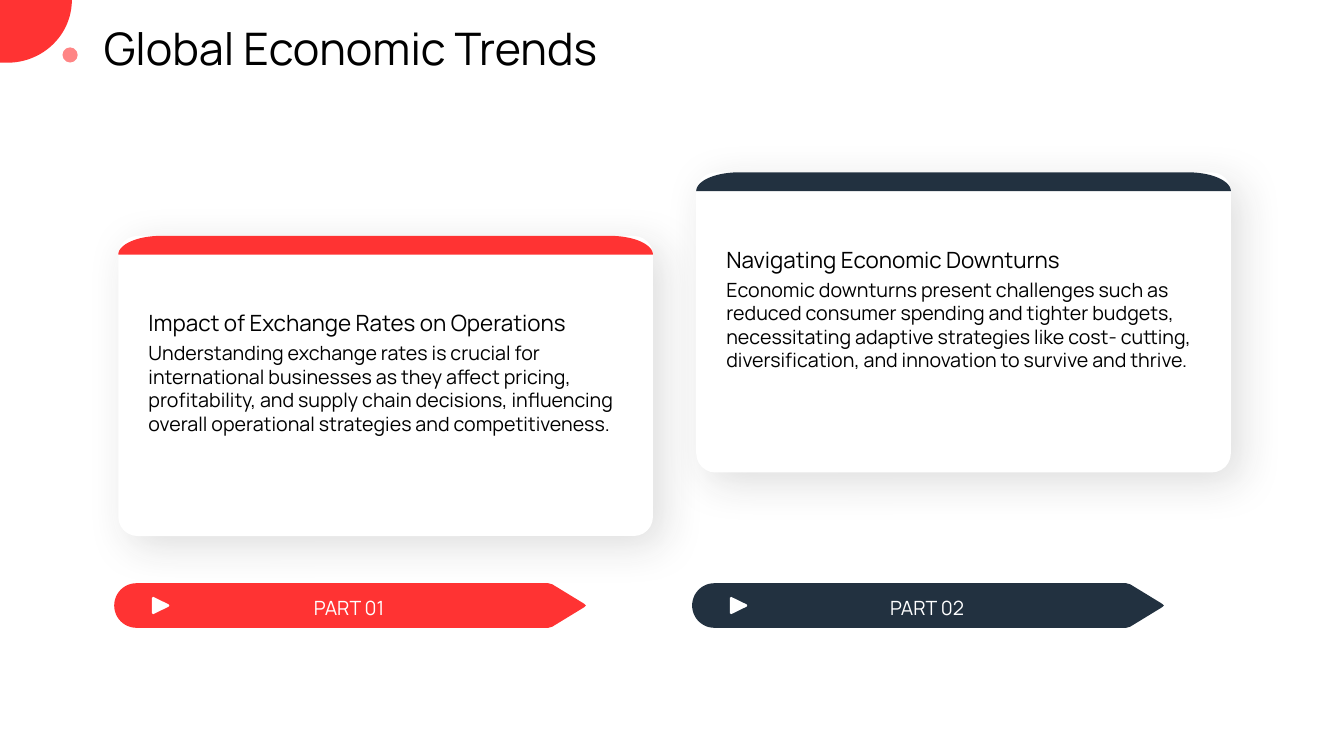
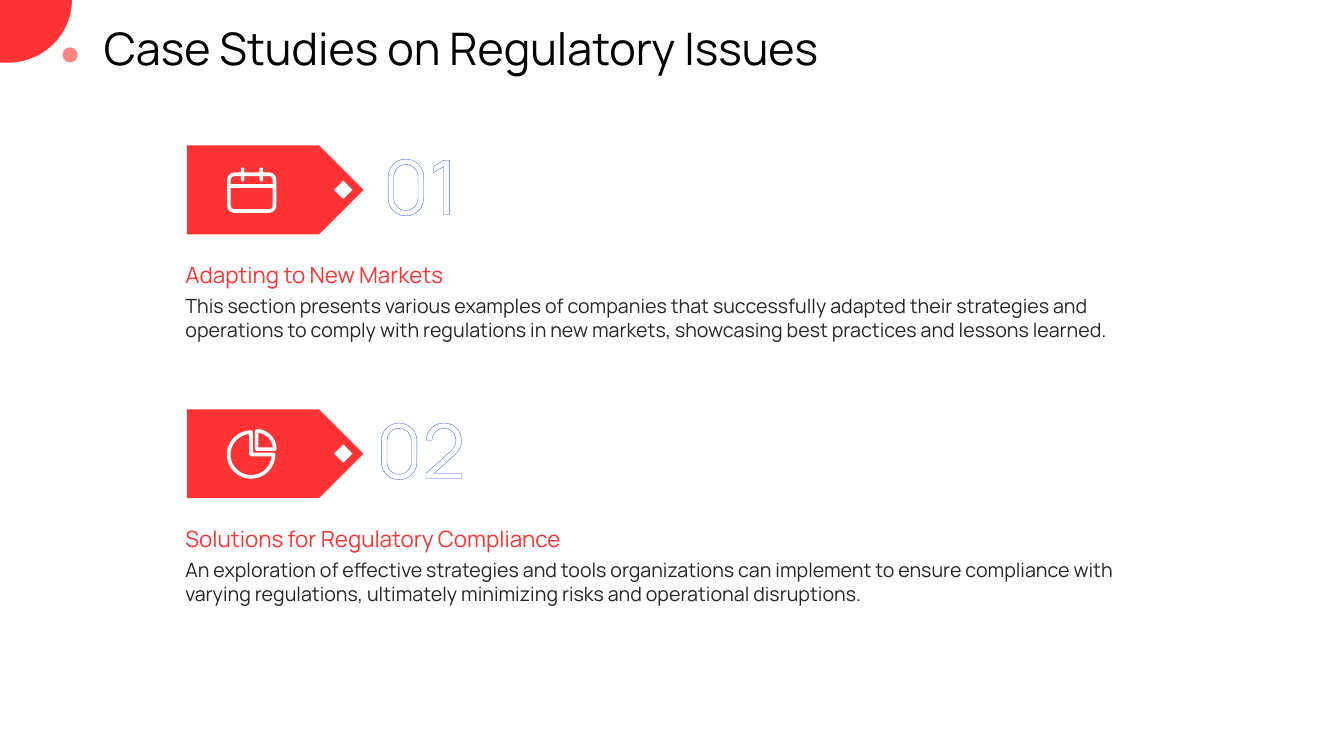
from math import cos, radians, sin

from lxml import etree
from pptx import Presentation
from pptx.dml.color import RGBColor
from pptx.enum.shapes import MSO_CONNECTOR, MSO_SHAPE
from pptx.enum.text import MSO_ANCHOR, MSO_AUTO_SIZE, PP_ALIGN
from pptx.oxml.ns import qn
from pptx.util import Inches, Pt

# Enum members
RECTANGLE, ELLIPSE = MSO_SHAPE.RECTANGLE, MSO_SHAPE.OVAL
ROUNDED, TAG = MSO_SHAPE.ROUNDED_RECTANGLE, MSO_SHAPE.PENTAGON
STRAIGHT = MSO_CONNECTOR.STRAIGHT
TOP, MIDDLE, BOTTOM = MSO_ANCHOR.TOP, MSO_ANCHOR.MIDDLE, MSO_ANCHOR.BOTTOM
LEFT, CENTER = PP_ALIGN.LEFT, PP_ALIGN.CENTER
GROW = MSO_AUTO_SIZE.SHAPE_TO_FIT_TEXT

# Shared look
WIDTH, HEIGHT = Inches(13.33), Inches(7.5)
FONT = "Manrope"
RED, PINK, NAVY, BLUE = "FF3333", "FF8585", "223140", "3860F4"
WHITE, BLACK, GREY = "FFFFFF", "000000", "262626"
ICON_LINE = 2.6

# Pitches, in percent of the slide
CARD_PITCH = 43
CASE_PITCH = 34.9

CARDS = [
    (31.2, RED, "PART 01", "Impact of Exchange Rates on Operations",
     "Understanding exchange rates is crucial for international businesses as "
     "they affect pricing, profitability, and supply chain decisions, "
     "influencing overall operational strategies and competitiveness."),
    (22.8, NAVY, "PART 02", "Navigating Economic Downturns",
     "Economic downturns present challenges such as reduced consumer spending "
     "and tighter budgets, necessitating adaptive strategies like cost- cutting, "
     "diversification, and innovation to survive and thrive."),
]


# Units and colours
def across(percent):
    return round(WIDTH * percent / 100)


def down(percent):
    return round(HEIGHT * percent / 100)


def box(left, top, width, height):
    return across(left), down(top), across(width), down(height)


def color(hex_string):
    return RGBColor.from_string(hex_string)


def arc(center, radii, start, end, steps=24):
    """Points on an ellipse, with angles clockwise from the right."""
    angles = [radians(start + (end - start) * step / steps)
              for step in range(steps + 1)]
    return [(center[0] + radii[0] * cos(angle), center[1] + radii[1] * sin(angle))
            for angle in angles]


# Elements
def paint(shape, fill=None, line=None):
    shape.shadow.inherit = False
    if fill:
        shape.fill.solid()
        shape.fill.fore_color.rgb = color(fill)
    else:
        shape.fill.background()
    if line:
        shape.line.color.rgb = color(line)
        shape.line.width = Pt(ICON_LINE)
    else:
        shape.line.fill.background()
    return shape


def add_preset(slide, kind, area, fill=None, line=None, corner=None, rotation=0):
    shape = paint(slide.shapes.add_shape(kind, *box(*area)), fill, line)
    shape.rotation = rotation
    if corner is not None:
        shape.adjustments[0] = corner
    return shape


def add_outline(slide, points, fill=None, line=None):
    corners = [(across(x), down(y)) for x, y in points]
    builder = slide.shapes.build_freeform(*corners[0])
    builder.add_line_segments(corners[1:], close=True)
    return paint(builder.convert_to_shape(), fill, line)


def add_text(slide, area, text, size, ink, anchor=TOP, align=LEFT, margin=0, **extra):
    frame = slide.shapes.add_textbox(*box(*area)).text_frame
    frame_format = {"word_wrap": True, "vertical_anchor": anchor, **extra}
    for side in ("left", "top", "right", "bottom"):
        frame_format[f"margin_{side}"] = Inches(margin)
    for name, value in frame_format.items():
        setattr(frame, name, value)
    paragraph = frame.paragraphs[0]
    paragraph.alignment = align
    run = paragraph.add_run()
    run.text = text
    for name, value in {"name": FONT, "size": Pt(size)}.items():
        setattr(run.font, name, value)
    run.font.color.rgb = color(ink)
    return run


def add_color_xml(parent, hex_string):
    return etree.SubElement(parent, qn("a:srgbClr"), val=hex_string)


def outline_text(run, hex_string, width):
    line = etree.Element(qn("a:ln"), w=str(Pt(width)))
    add_color_xml(etree.SubElement(line, qn("a:solidFill")), hex_string)
    run.font._element.insert(0, line)


def add_soft_shadow(shape):
    effects = shape._element.spPr.find(qn("a:effectLst"))
    shadow = etree.SubElement(
        effects, qn("a:outerShdw"), blurRad=str(Pt(30)), dist=str(Pt(10)),
        dir="2700000", algn="tl", rotWithShape="0")
    etree.SubElement(add_color_xml(shadow, GREY), qn("a:alpha"), val="15000")


# Slide with the shared title and corner
def add_slide(presentation, title):
    slide = presentation.slides.add_slide(presentation.slide_layouts[6])
    add_text(slide, (7.73, 3.2, 86.6, 6.3), title, 32, BLACK, MIDDLE)
    quarter = arc((0.55, 0), (4.8, 8.3), 0, 90)
    add_outline(slide, [(0, 0), *quarter, (0, 8.3)], RED)
    add_preset(slide, ELLIPSE, (4.65, 6.27, 1.13, 2), PINK)
    return slide


# Parts of the trends slide
def add_card(slide, left, top, accent, heading, body):
    width, cap = 39.78, (3.2, 2.5)
    panel = add_preset(slide, ROUNDED, (left, top, width, 39.7), WHITE, corner=0.064)
    add_soft_shadow(panel)
    base = top + cap[1]
    add_outline(slide, arc((left + cap[0], base), cap, 180, 270)
                + arc((left + width - cap[0], base), cap, 270, 360), accent)
    add_text(slide, (left + 2.25, top + 3.3, 35.3, 10), heading, 16, BLACK, BOTTOM)
    add_text(slide, (left + 2.25, top + 13.9, 35.3, 23.9), body, 14, BLACK)


def add_part_arrow(slide, left, accent, label):
    middle, half = 80.1, 2.95
    upper = [(32.3, -half), (32.6, -2.8), (34.95, -0.25), (35.1, 0)]
    nose = upper + [(x, -y) for x, y in reversed(upper[:-1])]
    add_outline(slide, arc((left + 1.65, middle), (1.65, half), 90, 270)
                + [(left + x, middle + y) for x, y in nose], accent)
    play = [(2.8, -1), (2.9, -1.15), (4.05, -0.15), (4.1, 0),
            (4.05, 0.15), (2.9, 1.15), (2.8, 1)]
    add_outline(slide, [(left + x, middle + y) for x, y in play], WHITE)
    add_text(slide, (left + 7.95, 78, 19.05, 4.3), label, 14, WHITE,
             align=CENTER, margin=0.06, auto_size=GROW)


# Parts of the cases slide
def add_calendar(slide, top):
    left, width, rule = 17.03, 3.4, top + 5.4
    add_preset(slide, ROUNDED, (left, top + 3.8, width, 4.87), line=WHITE, corner=0.15)
    divider = slide.shapes.add_connector(
        STRAIGHT, across(left), down(rule), across(left + width), down(rule))
    divider.line.color.rgb = color(WHITE)
    divider.line.width = Pt(ICON_LINE)
    etree.SubElement(divider._element.spPr, qn("a:effectLst"))
    for ring in (17.92, 19.3):
        add_preset(slide, ROUNDED, (ring, top + 2.9, 0.27, 1.85), WHITE, corner=0.5)


def add_pie(slide, top):
    for center, radii, start, end in [((18.68, top + 5.98), (1.67, 2.96), 0, 270),
                                      ((19.09, top + 5.25), (1.35, 2.4), 270, 360)]:
        add_outline(slide, [center, *arc(center, radii, start, end)], line=WHITE)


def add_case(slide, top, number, add_icon, heading, body):
    add_preset(slide, TAG, (13.9, top, 13.15, 11.75), RED)
    add_preset(slide, RECTANGLE, (25.05, top + 5, 0.98, 1.73), WHITE, rotation=45)
    add_icon(slide, top)
    digits = add_text(slide, (27.4, top - 0.85, 7.8, 14.4), number, 54, WHITE,
                      align=CENTER)
    outline_text(digits, BLUE, 1.25)
    add_text(slide, (13.8, top + 13.55, 72.3, 5.3), heading, 16, RED, BOTTOM)
    add_text(slide, (13.8, top + 19.65, 72.3, 15.7), body, 14, GREY)


CASES = [
    ("01", add_calendar, "Adapting to New Markets",
     "This section presents various examples of companies that successfully "
     "adapted their strategies and operations to comply with regulations in new "
     "markets, showcasing best practices and lessons learned."),
    ("02", add_pie, "Solutions for Regulatory Compliance",
     "An exploration of effective strategies and tools organizations can "
     "implement to ensure compliance with varying regulations, ultimately "
     "minimizing risks and operational disruptions."),
]


def main():
    presentation = Presentation()
    presentation.slide_width, presentation.slide_height = WIDTH, HEIGHT

    trends = add_slide(presentation, "Global Economic Trends")
    for column, (top, accent, label, heading, body) in enumerate(CARDS):
        shift = column * CARD_PITCH
        add_card(trends, 8.8 + shift, top, accent, heading, body)
        add_part_arrow(trends, 8.5 + shift, accent, label)

    cases = add_slide(presentation, "Case Studies on Regulatory Issues")
    for row, case in enumerate(CASES):
        add_case(cases, 19.25 + row * CASE_PITCH, *case)

    presentation.save("out.pptx")


if __name__ == "__main__":
    main()
